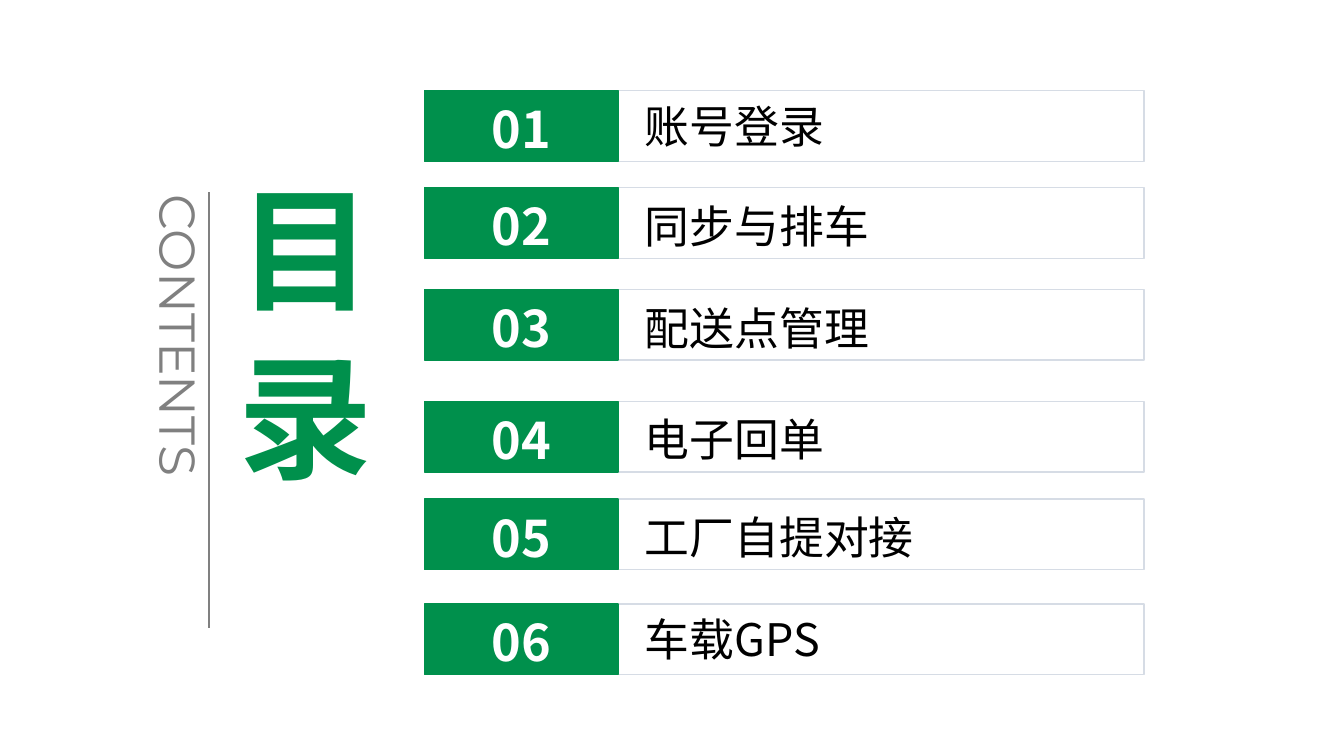
"""Build a contents slide with six numbered sections."""
from lxml import etree
from pptx import Presentation
from pptx.dml.color import RGBColor
from pptx.enum.shapes import MSO_CONNECTOR, MSO_SHAPE
from pptx.enum.text import MSO_ANCHOR, MSO_AUTO_SIZE, PP_ALIGN
from pptx.oxml.ns import qn
from pptx.util import Pt

RECT, LINE = MSO_SHAPE.RECTANGLE, MSO_CONNECTOR.STRAIGHT
TOP, MIDDLE = MSO_ANCHOR.TOP, MSO_ANCHOR.MIDDLE
LEFT, CENTER = PP_ALIGN.LEFT, PP_ALIGN.CENTER
GROW = MSO_AUTO_SIZE.SHAPE_TO_FIT_TEXT

GREEN = RGBColor(0x00, 0x90, 0x4C)
GRAY = RGBColor(0x80, 0x80, 0x80)
PALE = RGBColor(0xD6, 0xDC, 0xE5)
WHITE = RGBColor(0xFF, 0xFF, 0xFF)
BLACK = RGBColor(0x00, 0x00, 0x00)
SANS, LATIN = "Noto Sans CJK SC", "Montserrat"

TITLE, SIDE = "目 录", "CONTENTS"
ROWS = [
    ("账号登录", 64.8, 2.2),
    ("同步与排车", 133.9, 4.3),
    ("配送点管理", 206.6, 5),
    ("电子回单", 286.6, 4.3),
    ("工厂自提对接", 356.4, 4.3),
    ("车载GPS", 431.3, 2.2),
]
NUM_X, NUM_W = 303.1, 138.4
BAR_X, BAR_W, BAR_H = NUM_X + NUM_W, 375.8, 50.6
TEXT_X, TEXT_W, TEXT_H = 453.6, 357.8, 46.1


def write(shape, text, size, color, font=SANS, bold=False, align=LEFT):
    """Set the text of a shape and format its run."""
    frame = shape.text_frame
    frame.text = text
    para = frame.paragraphs[0]
    para.alignment = align
    run = para.runs[0]
    run.font.name = font
    run.font.size = Pt(size)
    run.font.bold = bold
    run.font.color.rgb = color
    east = etree.SubElement(run.font._element, qn("a:ea"))
    east.set("typeface", font)


def stand(shape):
    """Turn the text of a shape upright in one column."""
    frame = shape.text_frame
    frame.word_wrap = False
    frame.auto_size = GROW
    frame.vertical_anchor = TOP
    frame._txBody.bodyPr.set("vert", "eaVert")


def add_bar(shapes, x, y, width, line):
    """Add a bar without shadow."""
    bar = shapes.add_shape(RECT, Pt(x), Pt(y), Pt(width), Pt(BAR_H))
    bar.shadow.inherit = False
    bar.fill.background()
    bar.line.color.rgb = line
    bar.line.width = Pt(1)
    return bar


def add_row(shapes, num, label, y, drop):
    """Add one numbered section."""
    add_bar(shapes, BAR_X, y, BAR_W, PALE)
    tag = add_bar(shapes, NUM_X, y, NUM_W, GREEN)
    tag.fill.solid()
    tag.fill.fore_color.rgb = GREEN
    write(tag, f"{num:02}", 36, WHITE, bold=True, align=CENTER)
    frame = tag.text_frame
    frame.vertical_anchor = MIDDLE
    frame.margin_top, frame.margin_bottom = Pt(3.6), Pt(0)
    box = shapes.add_textbox(Pt(TEXT_X), Pt(y + drop), Pt(TEXT_W), Pt(TEXT_H))
    box.text_frame.word_wrap = True
    box.text_frame.auto_size = GROW
    write(box, label, 32, BLACK)


def main():
    deck = Presentation()
    deck.slide_width, deck.slide_height = Pt(960), Pt(540)
    slide = deck.slides.add_slide(deck.slide_layouts[5])
    shapes = slide.shapes

    title = shapes.title
    title.left, title.top = Pt(149), Pt(126.7)
    title.width, title.height = Pt(131), Pt(230.4)
    write(title, TITLE, 96, GREEN, bold=True)
    stand(title)

    side = shapes.add_textbox(Pt(95), Pt(131.8), Pt(58.3), Pt(208.8))
    write(side, SIDE, 36, GRAY, LATIN)
    stand(side)

    rule = shapes.add_connector(LINE, Pt(149), Pt(137.5), Pt(149), Pt(448.6))
    rule.line.color.rgb = GRAY
    rule.line.width = Pt(1.5)
    etree.SubElement(rule._element.spPr, qn("a:effectLst"))

    for num, row in enumerate(ROWS, 1):
        add_row(shapes, num, *row)
    deck.save("out.pptx")


if __name__ == "__main__":
    main()
